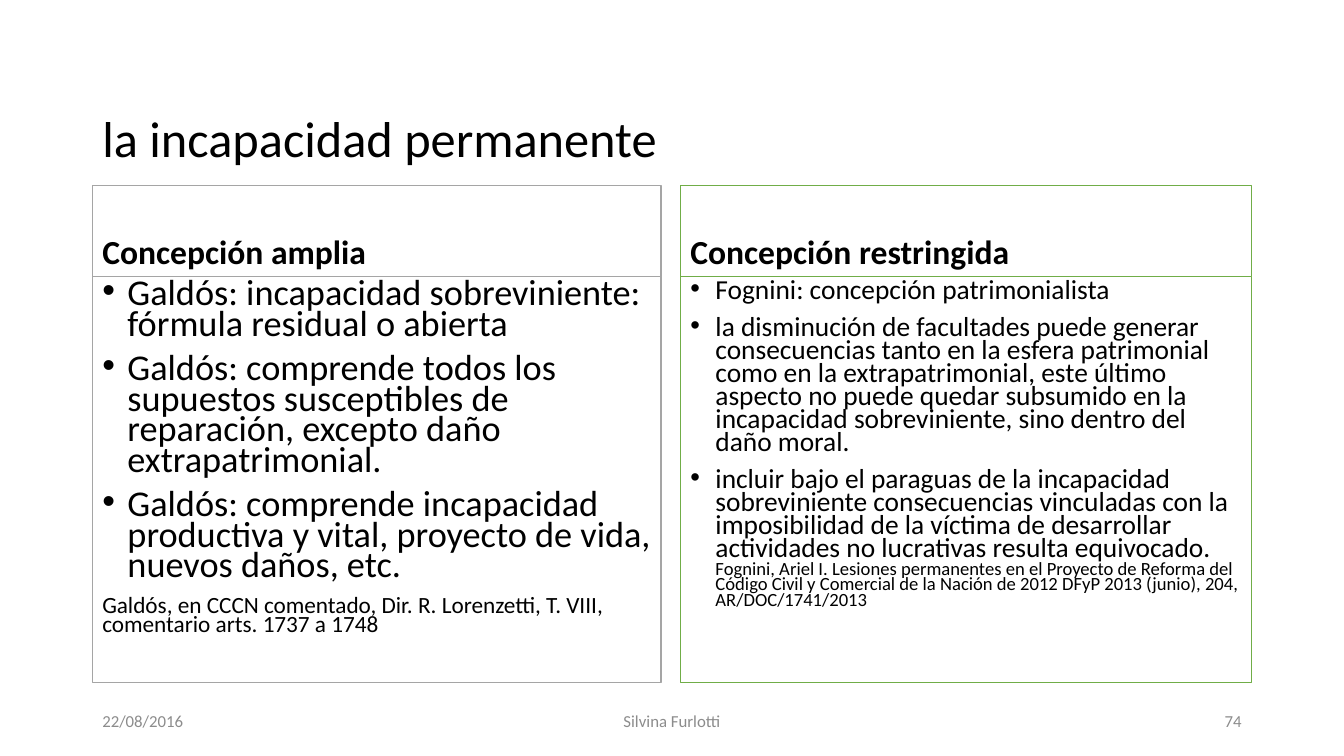
from pptx import Presentation
from pptx.dml.color import RGBColor
from pptx.enum import shapes, text
from pptx.oxml import parse_xml
from pptx.oxml.ns import nsdecls
from pptx.util import Pt

BLACK = RGBColor(0, 0, 0)
WHITE = RGBColor(255, 255, 255)
GRAY = RGBColor(0xA5, 0xA5, 0xA5)
GREEN = RGBColor(0x70, 0xAD, 0x47)
FOOTER_GRAY = RGBColor(0x8C, 0x8C, 0x8C)
FONT = "Calibri"

TITLE = "la incapacidad permanente"
COLUMNS = [
    {
        "heading": "Concepción amplia",
        "left": 66, "width": 406.2, "color": GRAY,
        "paragraphs": [
            (True, [("Galdós: incapacidad sobreviniente: fórmula residual o abierta", 25.9)]),
            (True, [("Galdós: comprende todos los supuestos susceptibles de reparación, "
                     "excepto daño extrapatrimonial.", 25.9)]),
            (True, [("Galdós: comprende incapacidad productiva y vital, proyecto de vida, "
                     "nuevos daños, etc.", 25.9)]),
            (False, [("Galdós, en CCCN comentado, Dir. R. Lorenzetti, T. VIII, "
                      "comentario arts. 1737 a 1748", 16.6)]),
        ],
    },
    {
        "heading": "Concepción restringida",
        "left": 486, "width": 408.2, "color": GREEN,
        "paragraphs": [
            (True, [("Fognini: concepción patrimonialista", 19.6)]),
            (True, [("la disminución de facultades puede generar consecuencias tanto en la "
                     "esfera patrimonial como en la extrapatrimonial, este último aspecto no "
                     "puede quedar subsumido en la incapacidad sobreviniente, sino dentro "
                     "del daño moral.", 19.6)]),
            (True, [("incluir bajo el paraguas de la incapacidad sobreviniente consecuencias "
                     "vinculadas con la imposibilidad de la víctima de desarrollar actividades "
                     "no lucrativas resulta equivocado. ", 19.6),
                    ("Fognini, Ariel I. Lesiones permanentes en el Proyecto de Reforma del "
                     "Código Civil y Comercial de la Nación de 2012 DFyP 2013 (junio), 204, "
                     "AR/DOC/1741/2013", 13.3)]),
        ],
    },
]
FOOTERS = [
    ("22/08/2016", 66, 216, text.PP_ALIGN.LEFT),
    ("Silvina Furlotti", 318, 324, text.PP_ALIGN.CENTER),
    ("74", 678, 216, text.PP_ALIGN.RIGHT),
]
HEADING_TOP, HEADING_HEIGHT, BODY_HEIGHT = 132.4, 65, 290
BULLET_INDENT = 18


def format_run(run, size, color=BLACK, bold=False):
    run.font.name = FONT
    run.font.size = Pt(size)
    run.font.color.rgb = color
    run.font.bold = bold


def add_line(shape, content, size, anchor, color=BLACK, bold=False):
    frame = shape.text_frame
    frame.word_wrap = True
    frame.vertical_anchor = anchor
    frame.text = content
    paragraph = frame.paragraphs[0]
    paragraph.alignment = text.PP_ALIGN.LEFT
    format_run(paragraph.runs[0], size, color, bold)
    return paragraph


def add_panel(slide, column, top, height):
    panel = slide.shapes.add_shape(
        shapes.MSO_SHAPE.RECTANGLE,
        Pt(column["left"]), Pt(top), Pt(column["width"]), Pt(height))
    panel.shadow.inherit = False
    panel.fill.solid()
    panel.fill.fore_color.rgb = WHITE
    panel.line.color.rgb = column["color"]
    panel.line.width = Pt(1)
    return panel


def add_bullet(paragraph):
    properties = paragraph._p.get_or_add_pPr()
    properties.set("marL", str(Pt(BULLET_INDENT)))
    properties.set("indent", str(-Pt(BULLET_INDENT)))
    properties.append(parse_xml(f'<a:buFont {nsdecls("a")} typeface="Arial"/>'))
    properties.append(parse_xml(f'<a:buChar {nsdecls("a")} char="•"/>'))


def fill_body(panel, paragraphs):
    frame = panel.text_frame
    frame.word_wrap = True
    frame.vertical_anchor = text.MSO_ANCHOR.TOP
    for index, (bulleted, runs) in enumerate(paragraphs):
        paragraph = frame.add_paragraph() if index else frame.paragraphs[0]
        paragraph.alignment = text.PP_ALIGN.LEFT
        paragraph.line_spacing = 0.7
        paragraph.space_before = Pt(10)
        if bulleted:
            add_bullet(paragraph)
        for content, size in runs:
            run = paragraph.add_run()
            run.text = content
            format_run(run, size)


def main():
    presentation = Presentation()
    presentation.slide_width, presentation.slide_height = Pt(960), Pt(540)
    slide = presentation.slides.add_slide(presentation.slide_layouts[6])

    title = slide.shapes.add_textbox(Pt(66), Pt(28.8), Pt(828), Pt(104.4))
    title.text_frame.margin_bottom = Pt(12.6)
    add_line(title, TITLE, 36, text.MSO_ANCHOR.BOTTOM).line_spacing = 0.9

    for column in COLUMNS:
        heading = add_panel(slide, column, HEADING_TOP, HEADING_HEIGHT)
        paragraph = add_line(heading, column["heading"], 24, text.MSO_ANCHOR.BOTTOM, bold=True)
        paragraph.line_spacing = 0.9
        paragraph.space_before = Pt(10)
        body = add_panel(slide, column, HEADING_TOP + HEADING_HEIGHT, BODY_HEIGHT)
        fill_body(body, column["paragraphs"])

    for content, left, width, alignment in FOOTERS:
        footer = slide.shapes.add_textbox(Pt(left), Pt(500.5), Pt(width), Pt(28.8))
        paragraph = add_line(footer, content, 12, text.MSO_ANCHOR.MIDDLE, FOOTER_GRAY)
        paragraph.alignment = alignment

    presentation.save("out.pptx")


if __name__ == "__main__":
    main()
